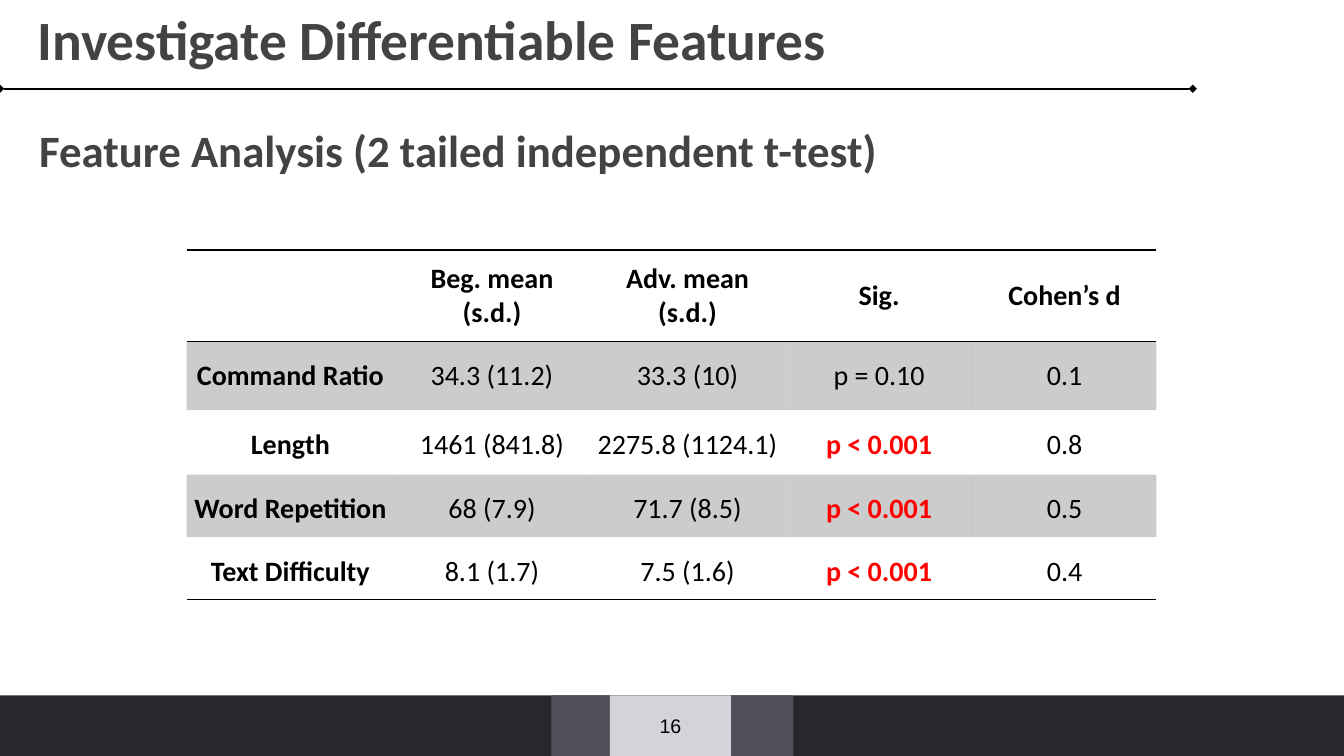
import pptx
import pptx.util
import pptx.dml.color
import pptx.enum.shapes
import pptx.enum.text
import pptx.oxml
import pptx.oxml.ns
from dataclasses import dataclass

Inches = pptx.util.Inches
Pt = pptx.util.Pt
Align = pptx.enum.text.PP_ALIGN
Anchor = pptx.enum.text.MSO_ANCHOR
NS = pptx.oxml.ns.nsdecls("a")


@dataclass(frozen=True)
class Theme:
    ink: str = "000000"
    head: str = "434343"
    alert: str = "FF0000"
    bar: str = "27272D"
    wing: str = "4F4F5C"
    tab: str = "D4D3D9"
    font: str = "Calibri"
    plain: str = "Arial"
    title: float = 39.6
    sub: float = 32
    cell: float = 20
    num: float = 14
    rule: float = 1.5
    edge: float = 1


def color(code):
    return pptx.dml.color.RGBColor.from_string(code)


def write(frame, text, *, size, font, ink, bold=False, align=Align.LEFT,
          line=None, after=None):
    para = frame.paragraphs[0]
    para.alignment = align
    para.line_spacing = line
    para.space_before = Pt(0)
    if after is not None:
        para.space_after = Pt(after)
    run = para.add_run()
    run.text = text
    run.font.size = Pt(size)
    run.font.name = font
    run.font.bold = bold
    run.font.color.rgb = color(ink)


class Deck:
    def __init__(self, theme):
        self.theme = theme
        self.show = pptx.Presentation()
        self.show.slide_width = Inches(13.33)
        self.show.slide_height = Inches(7.5)
        self.slide = self.show.slides.add_slide(self.show.slide_layouts[5])
        self.shapes = self.slide.shapes

    def place(self, box, left, top, width, height):
        box.left, box.top = Inches(left), Inches(top)
        box.width, box.height = Inches(width), Inches(height)

    def heading(self, box, text, spot, size):
        self.place(box, *spot)
        frame = box.text_frame
        frame.word_wrap = True
        frame.auto_size = pptx.enum.text.MSO_AUTO_SIZE.NONE
        frame.vertical_anchor = Anchor.MIDDLE
        write(frame, text, size=size, font=self.theme.font,
              ink=self.theme.head, bold=True, line=0.8)

    def title(self, text, *spot):
        self.heading(self.shapes.title, text, spot, self.theme.title)

    def label(self, text, *spot):
        box = self.shapes.add_textbox(0, 0, 0, 0)
        self.heading(box, text, spot, self.theme.sub)

    def block(self, fill, *spot):
        box = self.shapes.add_shape(
            pptx.enum.shapes.MSO_SHAPE.RECTANGLE, *map(Inches, spot))
        box.shadow.inherit = False
        box.fill.solid()
        box.fill.fore_color.rgb = color(fill)
        box.line.fill.background()
        return box

    def number(self, text, *spot):
        frame = self.block(self.theme.tab, *spot).text_frame
        frame.vertical_anchor = Anchor.MIDDLE
        write(frame, text, size=self.theme.num, font=self.theme.plain,
              ink=self.theme.ink, align=Align.CENTER)

    def rule(self, left, right, top):
        """Draw a level line with a diamond at each end."""
        line = self.shapes.add_connector(
            pptx.enum.shapes.MSO_CONNECTOR.STRAIGHT,
            Inches(left), Inches(top), Inches(right), Inches(top))
        line.line.color.rgb = color(self.theme.ink)
        line.line.width = Pt(self.theme.rule)
        pen = line.line._get_or_add_ln()
        for end in ("head", "tail"):
            pen.append(pptx.oxml.parse_xml(f'<a:{end}End {NS} type="diamond"/>'))
        line._element.spPr.append(pptx.oxml.parse_xml(f"<a:effectLst {NS}/>"))

    def edges(self, cell, top, bottom):
        """Rule the top and bottom of a cell on demand and clear its other sides."""
        props = cell._tc.get_or_add_tcPr()
        for at, (side, drawn) in enumerate(
                zip("LRTB", (False, False, top, bottom))):
            ink = (f'<a:solidFill><a:srgbClr val="{self.theme.ink}"/></a:solidFill>'
                   if drawn else "<a:noFill/>")
            props.insert(at, pptx.oxml.parse_xml(
                f'<a:ln{side} {NS} w="{Pt(self.theme.edge)}">{ink}</a:ln{side}>'))

    def shade(self, cell):
        cell.fill.solid()
        cell.fill.fore_color.rgb = color(self.theme.ink)
        tint = cell._tc.tcPr.find(".//" + pptx.oxml.ns.qn("a:srgbClr"))
        tint.append(pptx.oxml.parse_xml(f'<a:alpha {NS} val="20000"/>'))

    def table(self, rows, left, top, widths, heights):
        grid = self.shapes.add_table(
            len(rows), len(widths), Inches(left), Inches(top),
            Inches(sum(widths)), Inches(sum(heights))).table
        grid.first_row = grid.horz_banding = False
        for col, width in zip(grid.columns, widths):
            col.width = Inches(width)
        for row, height in zip(grid.rows, heights):
            row.height = Inches(height)
        for r, row in enumerate(rows):
            for c, text in enumerate(row):
                self.cell(grid.cell(r, c), text, r, c, len(rows) - 1)

    def cell(self, cell, text, r, c, last):
        cell.margin_left = cell.margin_right = Inches(0.07)
        cell.margin_top = cell.margin_bottom = 0
        cell.vertical_anchor = Anchor.TOP if r else Anchor.MIDDLE
        if r % 2:
            self.shade(cell)
        else:
            cell.fill.background()
        self.edges(cell, r < 2, r in (0, last))
        strong = text.startswith("p <")
        if text:
            write(cell.text_frame, text, size=self.theme.cell,
                  font=self.theme.font,
                  ink=self.theme.alert if strong else self.theme.ink,
                  bold=r == 0 or c == 0 or strong, align=Align.CENTER,
                  line=1.5 if r else None, after=6 if r else 12)


STATS = [
    ("", "Beg. mean (s.d.)", "Adv. mean (s.d.)", "Sig.", "Cohen’s d"),
    ("Command Ratio", "34.3 (11.2)", "33.3 (10)", "p = 0.10", "0.1"),
    ("Length", "1461 (841.8)", "2275.8 (1124.1)", "p < 0.001", "0.8"),
    ("Word Repetition", "68 (7.9)", "71.7 (8.5)", "p < 0.001", "0.5"),
    ("Text Difficulty", "8.1 (1.7)", "7.5 (1.6)", "p < 0.001", "0.4"),
]


def main():
    theme = Theme()
    deck = Deck(theme)
    deck.block(theme.bar, 0, 6.9, 13.33, 0.6)
    deck.block(theme.wing, 5.47, 6.9, 2.4, 0.6)
    deck.number("16", 6.05, 6.9, 1.2, 0.6)
    deck.rule(0, 11.83, 0.88)
    deck.table(STATS, 1.85, 2.48, (2.06, 1.94, 1.94, 1.86, 1.82),
               (0.91, 0.68, 0.64, 0.62, 0.62))
    deck.label("Feature Analysis (2 tailed independent t-test)",
               0.29, 1.19, 11.5, 0.69)
    deck.title("Investigate Differentiable Features", 0.27, 0.1, 11.5, 0.69)
    deck.show.save("out.pptx")


if __name__ == "__main__":
    main()
